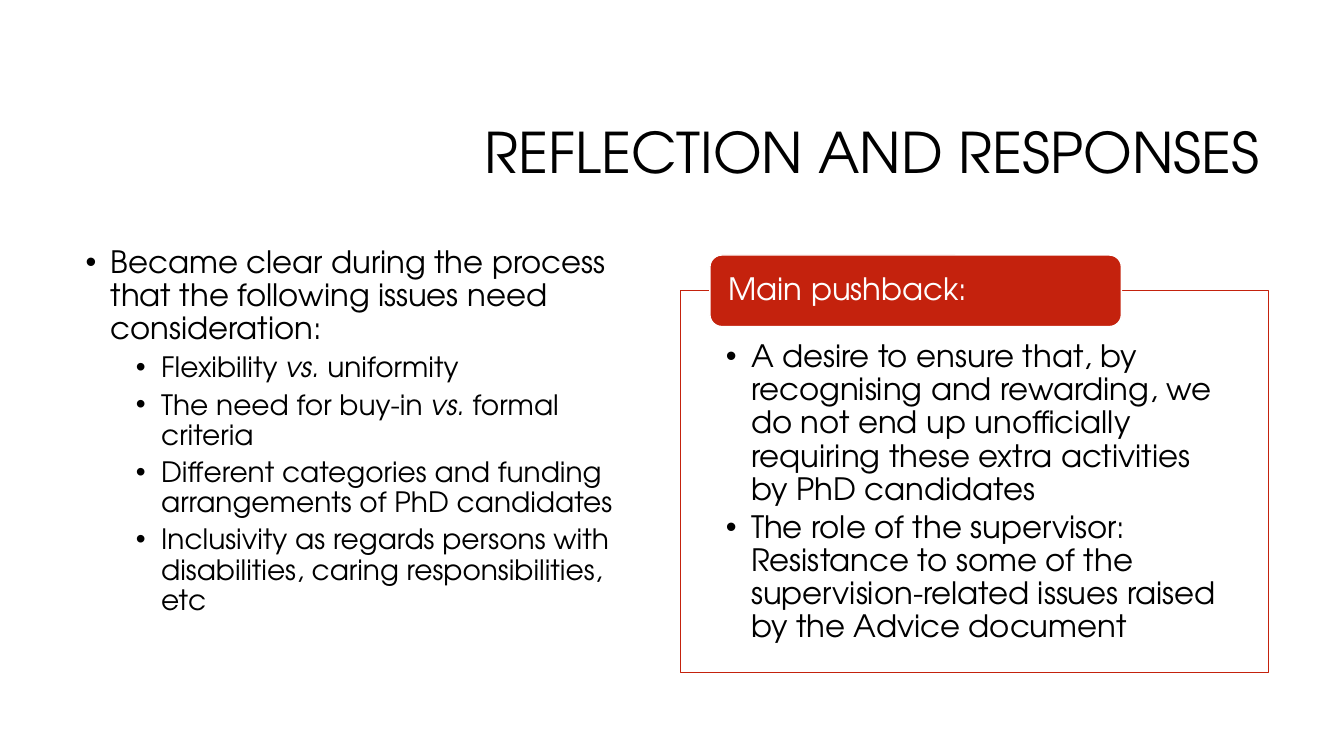
from lxml import etree
from pptx import Presentation
from pptx import util as u
from pptx.dml.color import RGBColor
from pptx.enum import shapes, text
from pptx.oxml.ns import qn

FONT = "TeX Gyre Adventor"
COLORS = {"ink": "000000", "paper": "FFFFFF", "red": "C4220D"}
WIDTH, HEIGHT = 13.33, 7.5
COL_WIDTH = 5.83
LEFT_COL, RIGHT_COL = 0.75, 6.75
HANGING = 0.25

INTRO = "Became clear during the process that the following issues need consideration:"
ISSUES = [
    "Flexibility vs. uniformity",
    "The need for buy-in vs. formal criteria",
    "Different categories and funding arrangements of PhD candidates",
    "Inclusivity as regards persons with disabilities, caring responsibilities, etc",
]
PUSHBACK = [
    "A desire to ensure that, by recognising and rewarding, we do not end up "
    "unofficially requiring these extra activities by PhD candidates",
    "The role of the supervisor: Resistance to some of the supervision-related "
    "issues raised by the Advice document",
]


def rgb(name):
    return RGBColor.from_string(COLORS[name])


def setup_frame(tf, anchor, insets):
    """Insets are left, top, right and bottom, in inches."""
    tf.word_wrap = True
    tf.auto_size = text.MSO_AUTO_SIZE.NONE
    tf.vertical_anchor = anchor
    tf.margin_left, tf.margin_top, tf.margin_right, tf.margin_bottom = map(u.Inches, insets)


def style_paragraph(p, size, color="ink", align=text.PP_ALIGN.LEFT):
    p.alignment = align
    p.line_spacing = 0.9
    for r in p.runs:
        r.font.name = FONT
        r.font.size = u.Pt(size)
        r.font.color.rgb = rgb(color)


def add_bullet(p, indent):
    pPr = p._p.get_or_add_pPr()
    pPr.set("marL", str(u.Inches(indent)))
    pPr.set("indent", str(-u.Inches(HANGING)))
    etree.SubElement(pPr, qn("a:buFont")).set("typeface", "Arial")
    etree.SubElement(pPr, qn("a:buChar")).set("char", "•")


def add_bulleted(tf, content, size, level=0, indent=HANGING, before=0, after=0):
    """Fill the empty first paragraph or add one; each "vs." becomes italic."""
    first = not tf.text
    p = tf.paragraphs[0] if first else tf.add_paragraph()
    p.level = level
    add_bullet(p, indent)
    for part in content.partition("vs."):
        if part:
            r = p.add_run()
            r.text = part
            r.font.italic = part == "vs."
    p.space_before = u.Pt(0 if first else before)
    p.space_after = u.Pt(after)
    style_paragraph(p, size)


def add_box(s, kind, left, top, width, height, fill, line):
    sp = s.shapes.add_shape(kind, *map(u.Inches, (left, top, width, height)))
    sp.shadow.inherit = False
    sp.fill.solid()
    sp.fill.fore_color.rgb = rgb(fill)
    sp.line.color.rgb = rgb(line)
    sp.line.width = u.Pt(1)
    return sp


def add_title(s, content):
    sp = s.shapes.title
    sp.left, sp.top, sp.width, sp.height = map(u.Inches, (3.17, 0.84, 9.42, 1.41))
    sp.text_frame.text = content
    setup_frame(sp.text_frame, text.MSO_ANCHOR.MIDDLE, (0.1, 0.05, 0.1, 0.05))
    style_paragraph(sp.text_frame.paragraphs[0], 40, align=text.PP_ALIGN.RIGHT)


def add_issues(s):
    sp = s.shapes.add_textbox(*map(u.Inches, (LEFT_COL, 2.4, COL_WIDTH, 4.4)))
    tf = sp.text_frame
    setup_frame(tf, text.MSO_ANCHOR.TOP, (0.1, 0.05, 0.1, 0.05))
    add_bulleted(tf, INTRO, 22)
    for issue in ISSUES:
        add_bulleted(tf, issue, 20, level=1, indent=0.75, before=5)


def add_pushback(s):
    panel = add_box(s, shapes.MSO_SHAPE.RECTANGLE, RIGHT_COL, 2.88, COL_WIDTH, 3.79,
                    "paper", "red")
    setup_frame(panel.text_frame, text.MSO_ANCHOR.TOP, (0.45, 0.5, 0.45, 0.17))
    for point in PUSHBACK:
        add_bulleted(panel.text_frame, point, 22, level=1, after=3.3)

    # The heading is 70% of the column wide and straddles the panel's top edge.
    heading = add_box(s, shapes.MSO_SHAPE.ROUNDED_RECTANGLE, RIGHT_COL + 0.05 * COL_WIDTH,
                      2.53, 0.7 * COL_WIDTH, 0.71, "red", "paper")
    heading.text_frame.text = "Main pushback:"
    setup_frame(heading.text_frame, text.MSO_ANCHOR.MIDDLE, (0.15, 0, 0.15, 0))
    style_paragraph(heading.text_frame.paragraphs[0], 22, "paper")


def main():
    prs = Presentation()
    prs.slide_width, prs.slide_height = u.Inches(WIDTH), u.Inches(HEIGHT)
    s = prs.slides.add_slide(prs.slide_layouts[5])
    add_title(s, "REFLECTION AND RESPONSES")
    add_issues(s)
    add_pushback(s)
    prs.save("out.pptx")


if __name__ == "__main__":
    main()
